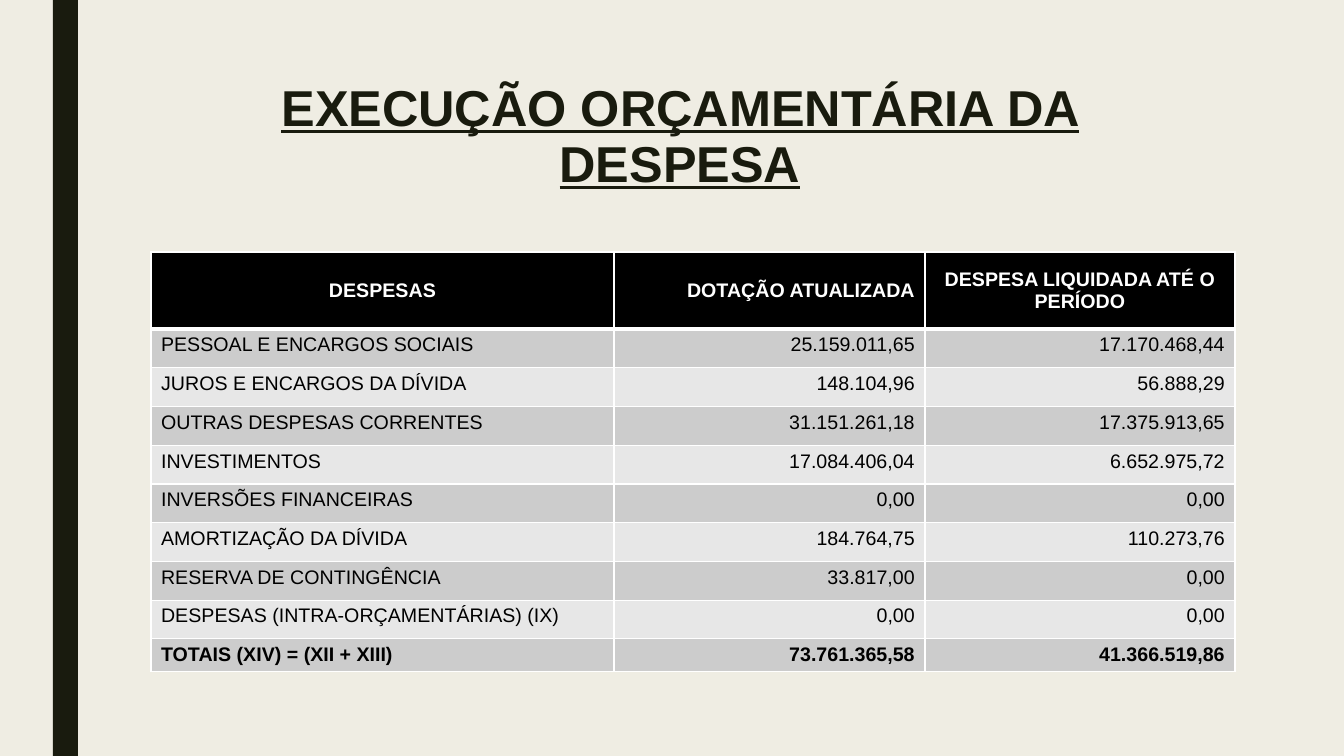
from lxml import etree
from pptx import Presentation
from pptx import util as u
from pptx.dml.color import RGBColor
from pptx.enum import shapes, text
from pptx.oxml.ns import qn

TITLE = "EXECUÇÃO ORÇAMENTÁRIA DA DESPESA"
ROWS = [
    ("DESPESAS", "DOTAÇÃO ATUALIZADA", "DESPESA LIQUIDADA ATÉ O PERÍODO"),
    ("PESSOAL E ENCARGOS SOCIAIS", "25.159.011,65", "17.170.468,44"),
    ("JUROS E ENCARGOS DA DÍVIDA", "148.104,96", "56.888,29"),
    ("OUTRAS DESPESAS CORRENTES", "31.151.261,18", "17.375.913,65"),
    ("INVESTIMENTOS", "17.084.406,04", "6.652.975,72"),
    ("INVERSÕES FINANCEIRAS", "0,00", "0,00"),
    ("AMORTIZAÇÃO DA DÍVIDA", "184.764,75", "110.273,76"),
    ("RESERVA DE CONTINGÊNCIA", "33.817,00", "0,00"),
    ("DESPESAS (INTRA-ORÇAMENTÁRIAS) (IX)", "0,00", "0,00"),
    ("TOTAIS (XIV) = (XII + XIII)", "73.761.365,58", "41.366.519,86"),
]
COLS = (463, 311, 310)
HEAD, BODY, TOTAL = 77, 310, 33  # heights of the table's three parts
HEX = {"back": "EFEDE3", "dark": "191B0E", "head": "000000", "ink": "000000",
       "line": "FFFFFF", "odd": "CCCCCC", "even": "E7E7E7"}
ALIGN = text.PP_ALIGN
LEFT, MID, RIGHT = ALIGN.LEFT, ALIGN.CENTER, ALIGN.RIGHT


def px(n):
    return u.Emu(round(n * 914400 / 100.8))


def box(*sides):
    return [px(n) for n in sides]


def paint(fill, name):
    fill.solid()
    fill.fore_color.rgb = RGBColor.from_string(HEX[name])


def write(frame, words, size=14, color="ink", bold=False, line=False,
          align=LEFT, space=None):
    para = frame.paragraphs[0]
    para.alignment = align
    para.line_spacing = space
    run = para.add_run()
    run.text = words
    font = run.font
    font.name, font.size = "Arial", u.Pt(size)
    font.bold, font.underline = bold, line
    font.color.rgb = RGBColor.from_string(HEX[color])


def edge(cell, **widths):
    """Draw the cell's borders, given as side=points."""
    props = cell._tc.get_or_add_tcPr()
    for spot, (side, width) in enumerate(widths.items()):
        line = etree.Element(qn(f"a:ln{side}"), w=str(u.Pt(width)))
        fill = etree.SubElement(line, qn("a:solidFill"))
        etree.SubElement(fill, qn("a:srgbClr"), val=HEX["line"])
        props.insert(spot, line)


def build_table(slide):
    last = len(ROWS) - 1
    highs = [HEAD] + [BODY / (last - 1)] * (last - 1) + [TOTAL]
    table = slide.shapes.add_table(
        len(ROWS), len(COLS), *box(151, 252, sum(COLS), sum(highs))).table
    for col, wide in zip(table.columns, COLS):
        col.width = px(wide)
    for r, (row, high) in enumerate(zip(ROWS, highs)):
        table.rows[r].height = px(high)
        top = r == 0
        for c, words in enumerate(row):
            cell = table.cell(r, c)
            align = (MID, RIGHT, MID)[c] if top else (LEFT, RIGHT, RIGHT)[c]
            write(cell.text_frame, words, color="line" if top else "ink",
                  bold=r in (0, last), align=align)
            if top:
                cell.vertical_anchor = text.MSO_ANCHOR.MIDDLE
            paint(cell.fill, "head" if top else "odd" if r % 2 else "even")
            edge(cell, L=1, R=1, T=3 if r == 1 else 1, B=3 if top else 1)


def main():
    deck = Presentation()
    deck.slide_width, deck.slide_height = box(1344, 756)
    slide = deck.slides.add_slide(deck.slide_layouts[5])
    paint(slide.background.fill, "back")

    bar = slide.shapes.add_shape(shapes.MSO_SHAPE.RECTANGLE, *box(53, 0, 25, 756))
    bar.shadow.inherit = False
    paint(bar.fill, "dark")
    bar.line.fill.background()

    title = slide.shapes.title
    title.left, title.top, title.width, title.height = box(151, 76, 1058, 163)
    frame = title.text_frame
    frame.word_wrap = True
    frame.auto_size = text.MSO_AUTO_SIZE.NONE
    frame.vertical_anchor = text.MSO_ANCHOR.TOP
    write(frame, TITLE, size=36, color="dark", bold=True, line=True,
          align=MID, space=0.93)

    build_table(slide)
    deck.save("out.pptx")


if __name__ == "__main__":
    main()
